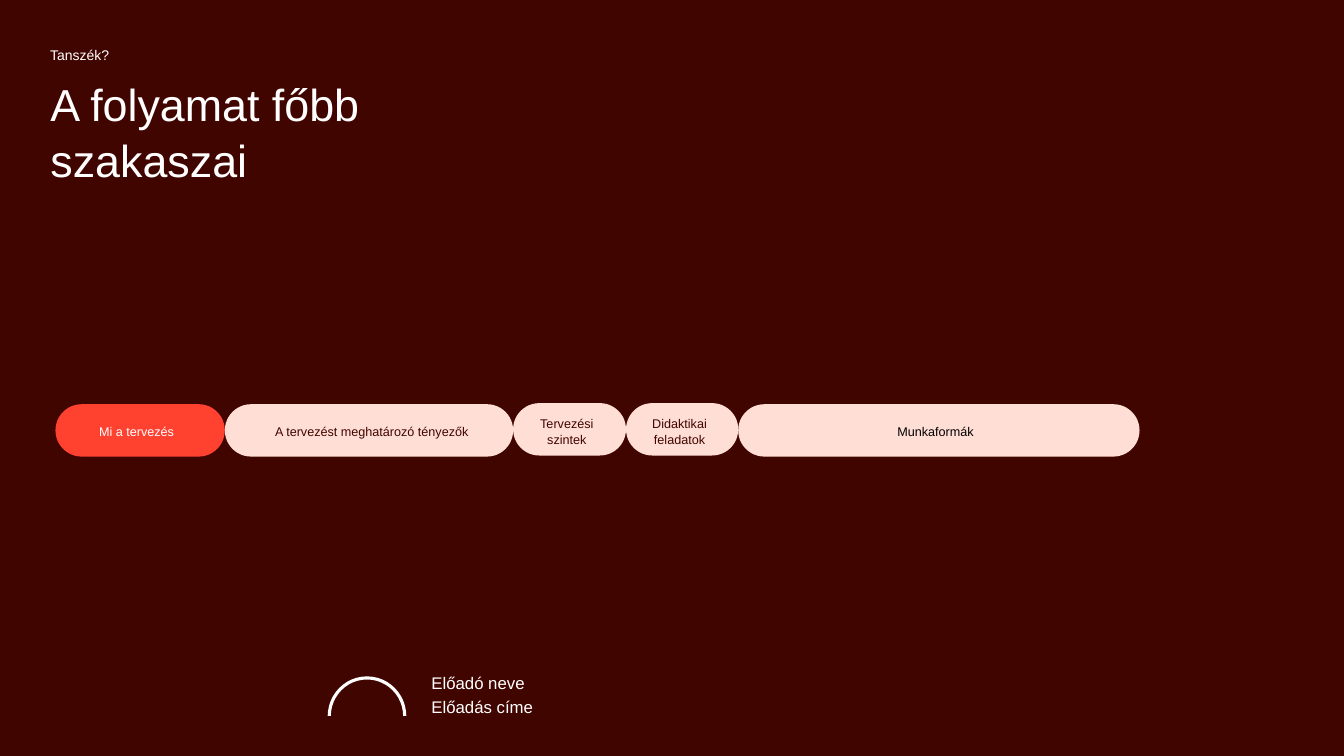
from pptx import Presentation
from pptx.dml.color import RGBColor
from pptx.enum.shapes import MSO_SHAPE
from pptx.enum.text import MSO_ANCHOR, MSO_AUTO_SIZE, PP_ALIGN
from pptx.util import Inches, Pt

PILL, ARC = MSO_SHAPE.ROUNDED_RECTANGLE, MSO_SHAPE.BLOCK_ARC
TOP = MSO_ANCHOR.TOP
GROW, FIXED = MSO_AUTO_SIZE.SHAPE_TO_FIT_TEXT, MSO_AUTO_SIZE.NONE
LEFT, MID = PP_ALIGN.LEFT, PP_ALIGN.CENTER

MAROON = RGBColor(0x41, 0x05, 0x00)
RED = RGBColor(0xFF, 0x41, 0x30)
PINK = RGBColor(0xFF, 0xDE, 0xD5)
WHITE = RGBColor(0xFF, 0xFF, 0xFF)
BLACK = RGBColor(0x00, 0x00, 0x00)

# Lengths are percent of the slide's width (across) and height (down).
TITLE = "A folyamat főbb szakaszai"
KICKER = "Tanszék?"
FOOTER = ["Előadó neve", "Előadás címe"]
# lines, pill width, label width, label shift, fill, ink, alignments
STAGES = [
    (["Mi a tervezés"], 12.6, 7.13, -0.23, RED, WHITE, [LEFT]),
    (["A tervezést meghatározó tényezők"], 21.45, 16.05, 0.3, PINK, MAROON, [LEFT]),
    (["Tervezési", "szintek"], 8.4, 5.85, 0, PINK, MAROON, [LEFT, MID]),
    (["Didaktikai", "feladatok"], 8.35, 5.63, -0.19, PINK, MAROON, [MID, MID]),
    (["Munkaformák"], 29.86, 7.28, -0.26, PINK, BLACK, [MID]),
]
MARGIN, START = 3, 4.13
# pill top, label top and label height by number of lines
ROWS = {1: (53.47, 55.33, 6), 2: (53.33, 54.27, 8.13)}
PILL_TALL = 6.93

prs = Presentation()
prs.slide_width, prs.slide_height = Inches(13.33), Inches(7.5)
slide = prs.slides.add_slide(prs.slide_layouts[5])
slide.background.fill.solid()
slide.background.fill.fore_color.rgb = MAROON


def place(x, y, w, h):
    """Turn shares of the slide into lengths."""
    wide, tall = prs.slide_width / 100, prs.slide_height / 100
    return [round(n) for n in (x * wide, y * tall, w * wide, h * tall)]


def write(lines, area, size=9, ink=WHITE, aligns=(LEFT,), wrap=True,
          fit=GROW, space=1.05, box=None):
    box = box or slide.shapes.add_textbox(0, 0, 0, 0)
    box.left, box.top, box.width, box.height = place(*area)
    frame = box.text_frame
    frame.text = "\n".join(lines)
    frame.word_wrap, frame.auto_size = wrap, fit
    frame.vertical_anchor = TOP
    for para, align in zip(frame.paragraphs, aligns):
        para.alignment, para.line_spacing = align, space
        para.font.name, para.font.size = "Arial", Pt(size)
        para.font.color.rgb = ink


def draw(kind, area, fill, adjust):
    shape = slide.shapes.add_shape(kind, *place(*area))
    shape.shadow.inherit = False
    shape.fill.solid()
    shape.fill.fore_color.rgb = fill
    shape.line.fill.background()
    for i, value in enumerate(adjust):
        shape.adjustments[i] = value


write([TITLE], (MARGIN, 9.07, 32.41, 15.73), size=32, box=slide.shapes.title)
write([KICKER], (MARGIN, 5.33, 24.98, 3.6), size=10)

left = START
for lines, wide, label, shift, fill, ink, aligns in STAGES:
    top, text_top, tall = ROWS[len(lines)]
    draw(PILL, (left, top, wide, PILL_TALL), fill, [0.5])
    text_left = left + (wide - label) / 2 + shift
    write(lines, (text_left, text_top, label, tall), ink=ink,
          aligns=aligns, wrap=False)
    left += wide

draw(ARC, (24.38, 89.47, 5.85, 10.53), WHITE, [108.16, 215.85, 0.04])
for row, line in enumerate(FOOTER):
    write([line], (31.36, 89.87 + 3.2 * row, 17.78, 2.27), size=12,
          fit=FIXED, space=Pt(6))

prs.save("out.pptx")
